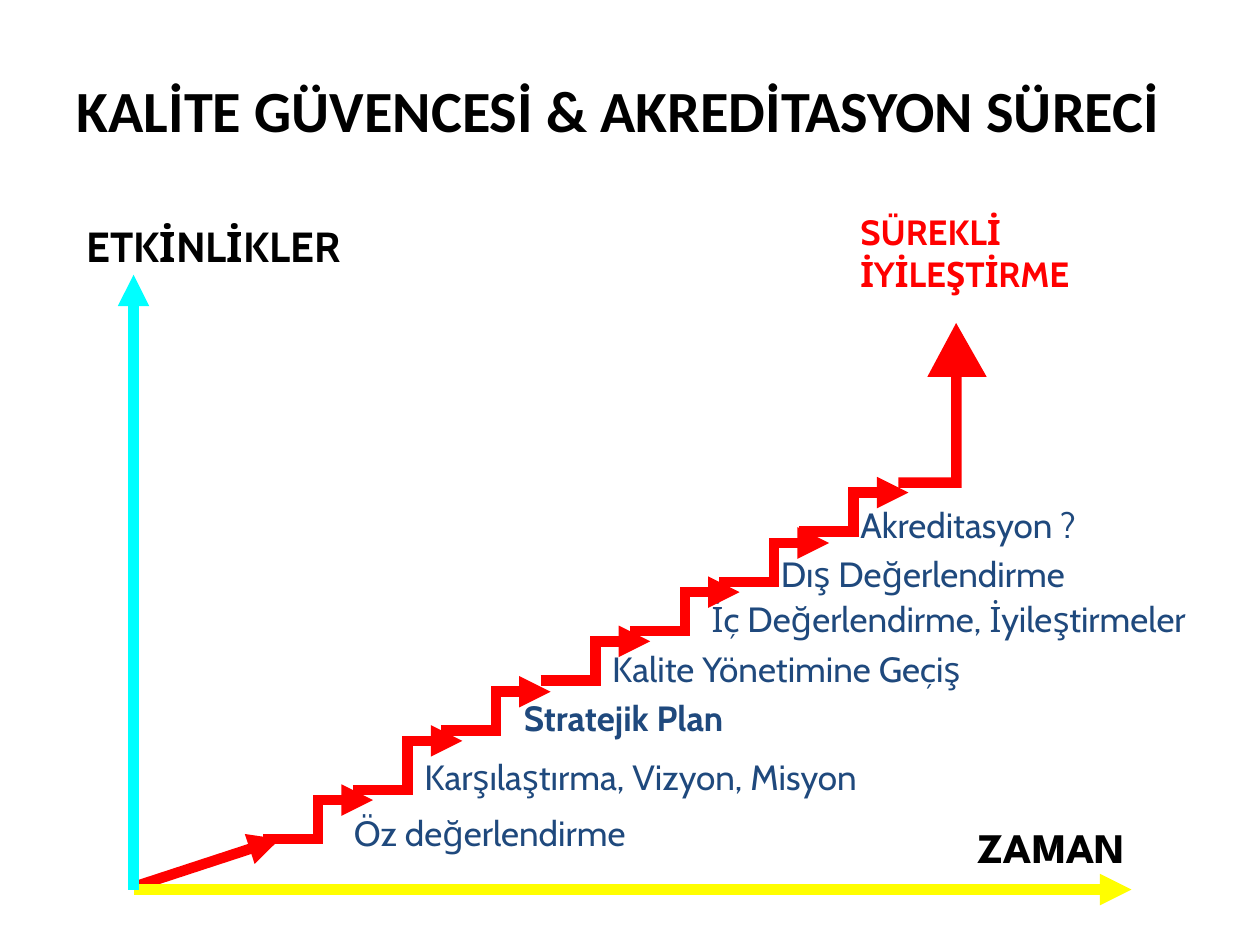
from dataclasses import dataclass

from lxml import etree
from pptx import Presentation
from pptx.dml.color import RGBColor
from pptx.enum.shapes import MSO_CONNECTOR
from pptx.enum.text import MSO_ANCHOR, PP_ALIGN
from pptx.oxml.ns import qn
from pptx.util import Inches, Pt

STRAIGHT = MSO_CONNECTOR.STRAIGHT
ELBOW = MSO_CONNECTOR.ELBOW
TOP = MSO_ANCHOR.TOP
MIDDLE = MSO_ANCHOR.MIDDLE
BOTTOM = MSO_ANCHOR.BOTTOM
LEFT = PP_ALIGN.LEFT

BLACK = RGBColor(0x00, 0x00, 0x00)
RED = RGBColor(0xFF, 0x00, 0x00)
YELLOW = RGBColor(0xFF, 0xFE, 0x00)
CYAN = RGBColor(0x00, 0xFF, 0xFF)
NAVY = RGBColor(0x1F, 0x49, 0x7D)

LINE_WIDTH = Pt(6)
STEP_WIDTH = 0.87


@dataclass
class Label:
    text: str
    left: float
    top: float
    width: float
    height: float
    size: float = 20
    color: RGBColor = NAVY
    bold: bool = False
    font: str = "Cabin"
    anchor: MSO_ANCHOR = TOP
    wrap: bool = True


@dataclass
class Arrow:
    x1: float
    y1: float
    x2: float
    y2: float
    color: RGBColor = RED
    kind: MSO_CONNECTOR = STRAIGHT


@dataclass
class Step:
    left: float
    bottom: float
    rise: float = 0.31


AXES = [
    Arrow(1.06, 7.04, 2.22, 6.66),
    Arrow(1.06, 7.06, 8.98, 7.06, YELLOW),
    Arrow(1.06, 7.06, 1.06, 2.18, CYAN),
]

LABELS = [
    Label("SÜREKLİ\nİYİLEŞTİRME", 6.73, 1.62, 2.76, 0.77, color=RED, bold=True),
    Label("Akreditasyon ?", 6.73, 3.95, 2.44, 0.43),
    Label("Dış Değerlendirme", 6.1, 4.07, 2.76, 0.7, anchor=BOTTOM),
    Label("İç Değerlendirme, İyileştirmeler", 5.55, 4.69, 4.45, 0.44),
    Label("Stratejik Plan", 4.06, 5.48, 2.52, 0.43, bold=True),
    Label("Kalite Yönetimine Geçiş", 4.76, 5.09, 3.54, 0.43),
    Label("Karşılaştırma, Vizyon, Misyon", 3.27, 5.95, 3.75, 0.43, wrap=False),
    Label("Öz değerlendirme", 2.71, 6.39, 2.37, 0.43, wrap=False),
    Label("ETKİNLİKLER", 0.59, 1.7, 3.07, 0.5, 24, BLACK, True),
    Label("ZAMAN", 7.66, 6.27, 1.67, 0.7, 24, BLACK, True, "League Spartan", BOTTOM),
]

STEPS = [
    Step(2.09, 6.66),
    Step(2.8, 6.27, 0.39),
    Step(3.5, 5.8),
    Step(4.29, 5.4),
    Step(5, 5.01),
    Step(5.71, 4.62),
    Step(6.34, 4.22),
]

FINAL_ARROW = [
    (7.59, 2.65), (7.43, 2.95), (7.59, 2.95), (7.59, 3.83), (7.13, 3.83),
    (7.59, 3.83), (7.59, 2.95), (7.76, 2.95),
]


def format_text(tf, size: float, font: str, color: RGBColor, bold: bool) -> None:
    for p in tf.paragraphs:
        p.alignment = LEFT
        for r in p.runs:
            r.font.size = Pt(size)
            r.font.name = font
            r.font.bold = bold
            r.font.color.rgb = color


def add_title(slide, text: str) -> None:
    sp = slide.shapes.title
    sp.left, sp.top = Inches(0.51), Inches(0.26)
    sp.width, sp.height = Inches(9.29), Inches(1.21)
    tf = sp.text_frame
    tf.text = text
    tf.vertical_anchor = MIDDLE
    format_text(tf, 33.3, "Calibri", BLACK, True)


def add_label(slide, label: Label) -> None:
    sp = slide.shapes.add_textbox(
        Inches(label.left), Inches(label.top), Inches(label.width), Inches(label.height)
    )
    tf = sp.text_frame
    tf.text = label.text
    tf.word_wrap = label.wrap
    tf.vertical_anchor = label.anchor
    format_text(tf, label.size, label.font, label.color, label.bold)


def add_arrow(slide, arrow: Arrow) -> None:
    sp = slide.shapes.add_connector(
        arrow.kind, Inches(arrow.x1), Inches(arrow.y1), Inches(arrow.x2), Inches(arrow.y2)
    )
    sp.line.color.rgb = arrow.color
    sp.line.width = LINE_WIDTH
    ln = sp.line._get_or_add_ln()
    etree.SubElement(ln, qn("a:miter"), lim="800000")
    etree.SubElement(ln, qn("a:tailEnd"), type="triangle")
    etree.SubElement(sp._element.spPr, qn("a:effectLst"))


def add_step(slide, step: Step) -> None:
    right, top = step.left + STEP_WIDTH, step.bottom - step.rise
    add_arrow(slide, Arrow(step.left, step.bottom, right, top, RED, ELBOW))


def add_final_arrow(slide) -> None:
    points = [(Inches(x), Inches(y)) for x, y in FINAL_ARROW]
    builder = slide.shapes.build_freeform(*points[0])
    builder.add_line_segments(points[1:], close=True)
    sp = builder.convert_to_shape()
    sp.shadow.inherit = False
    sp.fill.solid()
    sp.fill.fore_color.rgb = RED
    sp.line.color.rgb = RED
    sp.line.width = LINE_WIDTH
    etree.SubElement(sp.line._get_or_add_ln(), qn("a:miter"), lim="800000")


def main() -> None:
    prs = Presentation()
    prs.slide_width, prs.slide_height = Inches(10), Inches(7.5)
    slide = prs.slides.add_slide(prs.slide_layouts[5])
    add_title(slide, "KALİTE GÜVENCESİ & AKREDİTASYON SÜRECİ")
    for arrow in AXES:
        add_arrow(slide, arrow)
    for label in LABELS:
        add_label(slide, label)
    add_final_arrow(slide)
    for step in STEPS:
        add_step(slide, step)
    prs.save("out.pptx")


if __name__ == "__main__":
    main()
